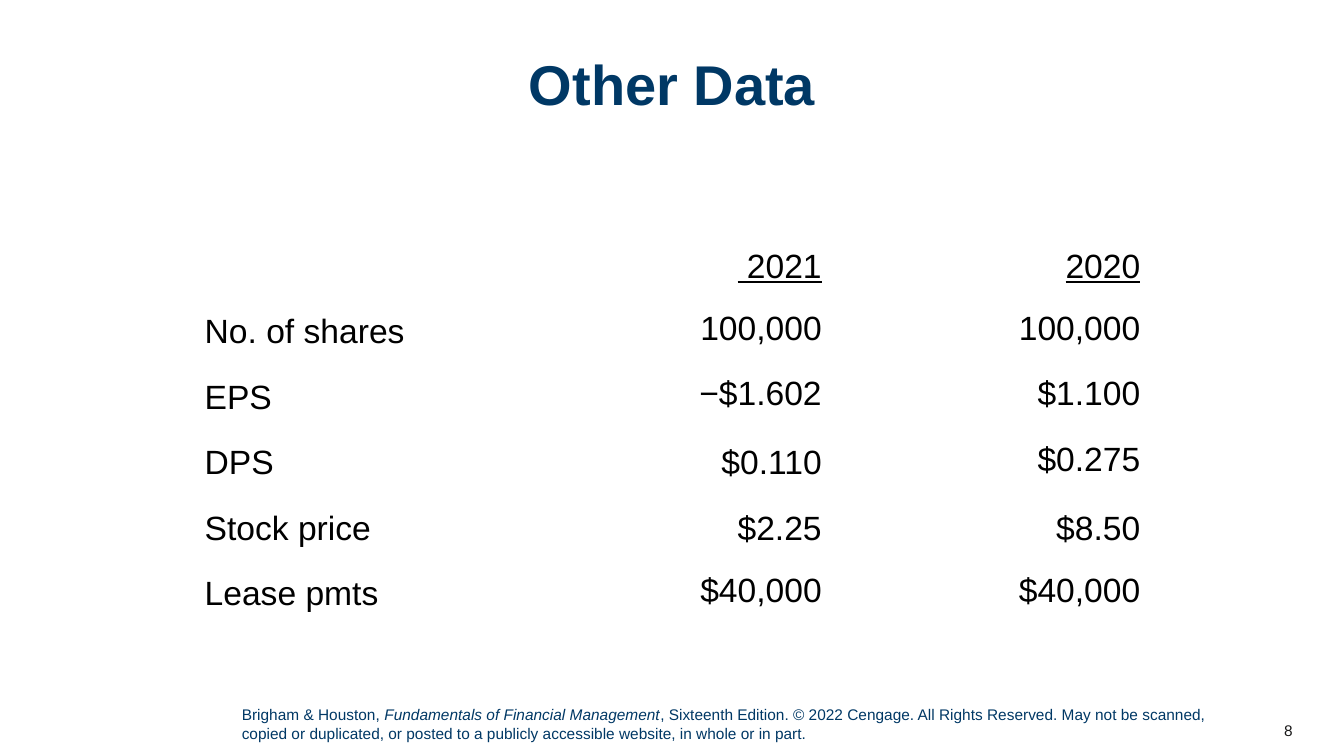
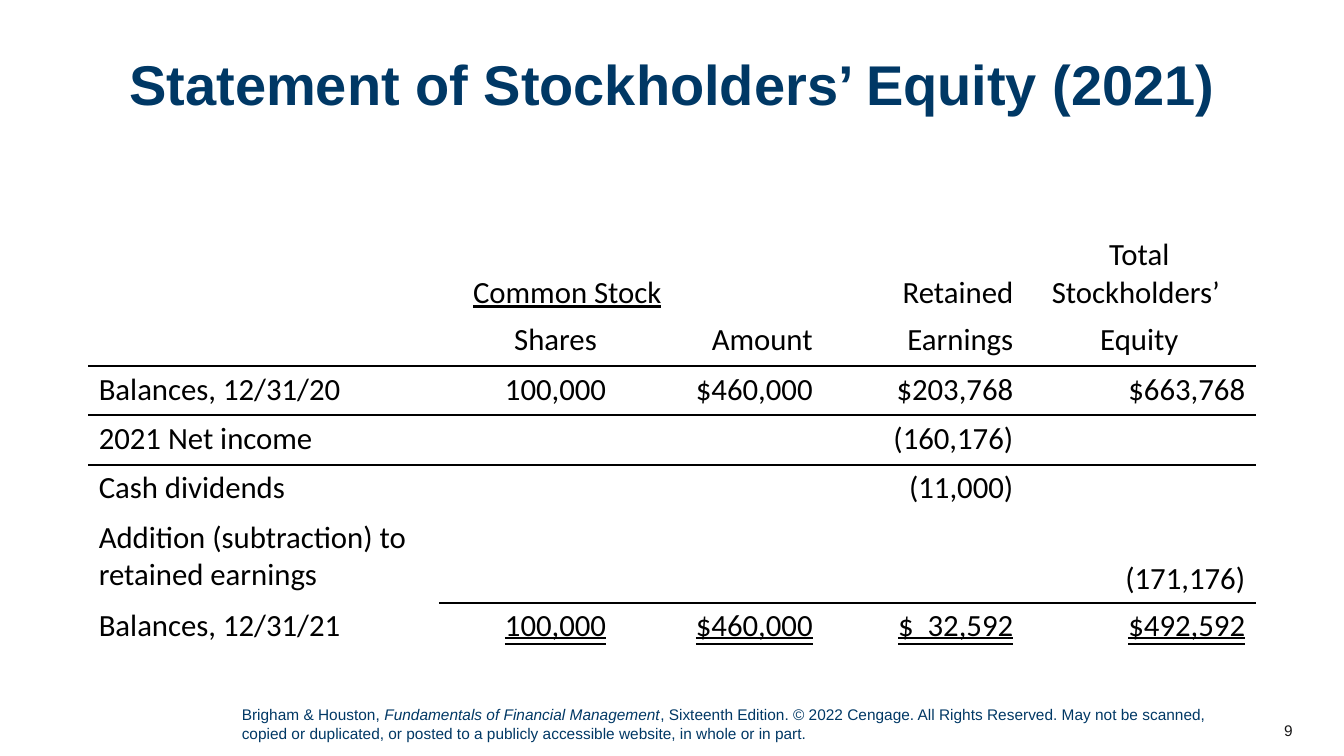
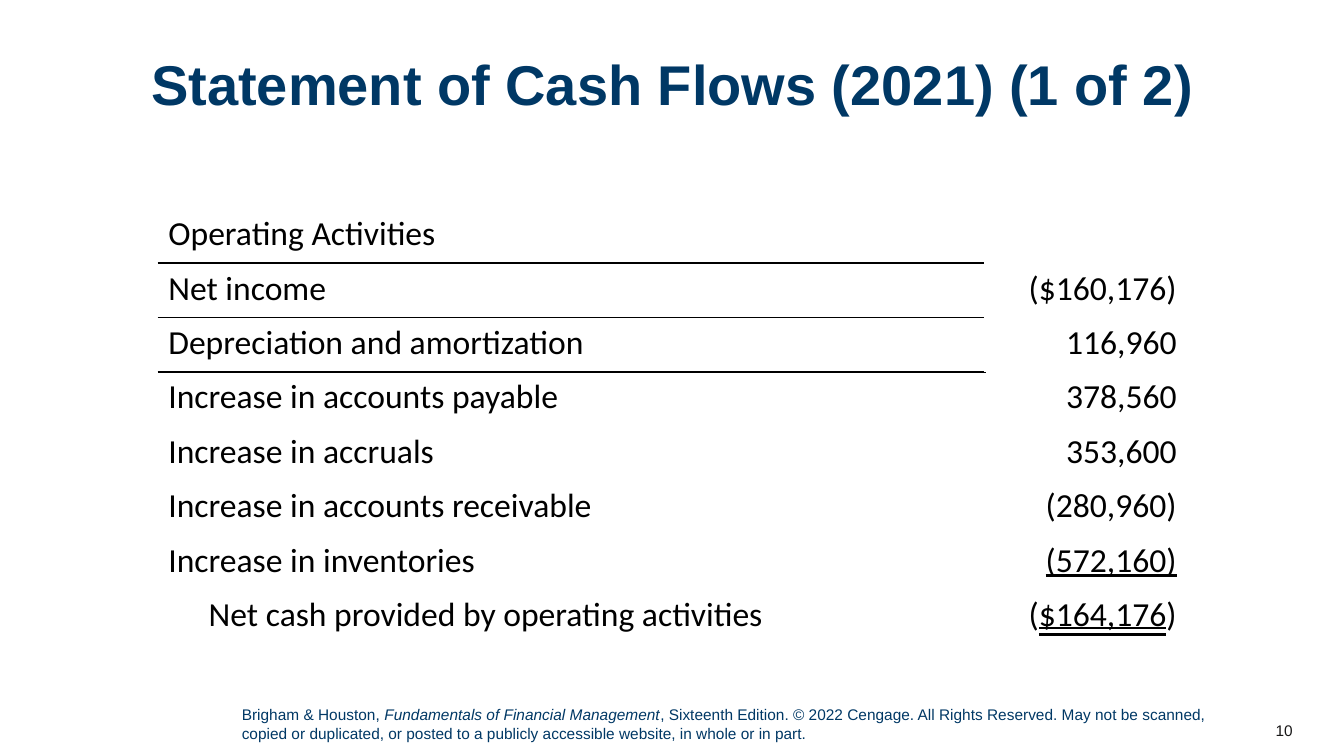
from lxml.etree import SubElement
from pptx import Presentation
from pptx.dml.color import RGBColor
from pptx.enum.text import MSO_ANCHOR, MSO_UNDERLINE, PP_ALIGN
from pptx.oxml.ns import qn
from pptx.util import Pt

PX = 9144  # EMU in one px, 100 px to the inch

NAVY = RGBColor(0x00, 0x38, 0x65)
INK = RGBColor(0x18, 0x17, 0x17)
BLACK = RGBColor(0, 0, 0)
WHITE = RGBColor(255, 255, 255)

LEFT, MID, RIGHT = PP_ALIGN.LEFT, PP_ALIGN.CENTER, PP_ALIGN.RIGHT
SIDES = {"l": LEFT, "c": MID, "r": RIGHT}
LOW = {"vertical_anchor": MSO_ANCHOR.BOTTOM}
TIGHT = {"line_spacing": 0.9, "space_after": Pt(12)}

# Font formats
HEAD = {"name": "Arial", "size": Pt(40), "bold": True, "rgb": NAVY}
FOOT = {"name": "Arial", "size": Pt(11), "rgb": NAVY}
PAGE = FOOT | {"rgb": INK}
DATA = {"name": "Arial", "size": Pt(24), "rgb": BLACK}
BOOK = DATA | {"name": "Calibri"}
SMALL = BOOK | {"size": Pt(22)}
LINE = {"underline": True}
TWIN = {"underline": MSO_UNDERLINE.DOUBLE_LINE}

CREDIT = [
    ("Brigham & Houston, ", {}),
    ("Fundamentals of Financial Management", {"italic": True}),
    (", Sixteenth Edition. © 2022 Cengage. All Rights Reserved. May not be "
     "scanned, copied or duplicated, or posted to a publicly accessible "
     "website, in whole or in part.", {}),
]


def style(thing, form):
    """Set each format value on a font, paragraph, frame or cell."""
    for key, val in form.items():
        if key == "rgb":
            thing.color.rgb = val
        else:
            setattr(thing, key, val)


def write(par, runs, font, form):
    """Fill a paragraph from a string or a list of (text, font) pairs."""
    style(par, form)
    for text, extra in [(runs, {})] if isinstance(runs, str) else runs:
        run = par.add_run()
        run.text = text
        style(run.font, font | extra)


def edge(cell, tag):
    """Draw a black border on one side of a cell."""
    line = SubElement(cell._tc.get_or_add_tcPr(), qn("a:" + tag), w=str(Pt(1.5)))
    fill = SubElement(line, qn("a:solidFill"))
    SubElement(fill, qn("a:srgbClr"), val=str(BLACK))


class Deck:
    def __init__(self, first):
        self.prs = Presentation()
        self.prs.slide_width, self.prs.slide_height = 1333 * PX, 750 * PX
        self.plan = self.prs.slide_layouts.get_by_name("Title Only")
        self.place(self.plan.placeholders[0], 52, 52, 1229, 133)
        self.page = first - 1
        self.slide = None

    def place(self, shape, *box):
        names = ("left", "top", "width", "height")
        style(shape, {name: n * PX for name, n in zip(names, box)})

    def start(self, title):
        """Add a slide with its title, footer and page number."""
        self.slide = self.prs.slides.add_slide(self.plan)
        self.page += 1
        frame = self.slide.shapes.title.text_frame
        style(frame, {"vertical_anchor": MSO_ANCHOR.TOP, "word_wrap": True})
        write(frame.paragraphs[0], title, HEAD,
              {"alignment": MID, "line_spacing": 0.9})
        self.text((1212, 705, 80, 40), str(self.page), PAGE, RIGHT,
                  MSO_ANCHOR.MIDDLE)
        self.text((230, 695, 980, 47), CREDIT, FOOT)

    def text(self, box, runs, font, side=LEFT, anchor=MSO_ANCHOR.TOP):
        frame = self.slide.shapes.add_textbox(*(n * PX for n in box)).text_frame
        style(frame, {"word_wrap": True, "vertical_anchor": anchor})
        write(frame.paragraphs[0], runs, font, {"alignment": side})

    def table(self, spot, cols, rows, sides, font, data,
              pars={}, cells={}, rules={}):
        """Rules map a row to the first and end column of the line below it."""
        box = (*spot, sum(cols), sum(rows))
        grid = self.slide.shapes.add_table(
            len(rows), len(cols), *(n * PX for n in box)).table
        style(grid, {"first_row": False, "horz_banding": False})
        for col, wide in zip(grid.columns, cols):
            col.width = wide * PX
        for row, high in zip(grid.rows, rows):
            row.height = high * PX

        for r, line in enumerate(data):
            for c, runs in enumerate(line):
                cell, key = grid.cell(r, c), (r, c)
                style(cell, cells.get(key, {}))
                # Borders go ahead of the fill
                for tag, row in (("lnT", r - 1), ("lnB", r)):
                    if c in range(*rules.get(row, (0, 0))):
                        edge(cell, tag)
                cell.fill.solid()
                cell.fill.fore_color.rgb = WHITE
                if runs:
                    form = {"alignment": SIDES[sides[c]]} | pars.get(key, {})
                    write(cell.text_frame.paragraphs[0], runs, font, form)


def main():
    deck = Deck(first=8)

    # Share data
    deck.start("Other Data")
    deck.table(
        (193, 241), [316] * 3, [65] * 6, "lrr", DATA,
        [("", [(" 2021", LINE)], [("2020", LINE)]),
         ("No. of shares", "100,000", "100,000"),
         ("EPS", "−$1.602", "$1.100"),
         ("DPS", "$0.110", "$0.275"),
         ("Stock price", "$2.25", "$8.50"),
         ("Lease pmts", "$40,000", "$40,000")],
        pars={key: TIGHT for key in
              [(1, 1), (1, 2), (2, 1), (2, 2), (3, 2), (5, 1), (5, 2)]})

    # Equity
    deck.start("Statement of Stockholders’ Equity (2021)")
    sums = ("100,000", "$460,000", "$  32,592", "$492,592")
    deck.table(
        (88, 226), [348, 230, 150, 199, 230], [88, 49, 49, 49, 49, 88, 49],
        "lcrrr", SMALL,
        [("", [("Common Stock", LINE)], "", "Retained", "Total Stockholders’ "),
         ("", "Shares", "Amount", "Earnings", "Equity"),
         ("Balances, 12/31/20", "100,000", "$460,000", "$203,768", "$663,768"),
         ("2021 Net income", "", "", "(160,176)", ""),
         ("Cash dividends", "", "", "(11,000)", ""),
         ("Addition (subtraction) to retained earnings", "", "", "",
          "(171,176)"),
         ("Balances, 12/31/21", *([(n, TWIN)] for n in sums))],
        pars={(0, 1): {"alignment": RIGHT}, (0, 4): {"alignment": MID},
              (1, 4): {"alignment": MID}},
        cells={key: LOW for key in [(0, 1), (0, 3), (0, 4), (5, 4)]},
        rules={1: (0, 5), 2: (0, 5), 5: (1, 5)})

    # Cash flows
    deck.start("Statement of Cash Flows (2021) (1 of 2)")
    deck.table(
        (157, 207), [820, 200], [54] * 8, "lr", BOOK,
        [("Operating Activities", ""),
         ("Net income", "($160,176)"),
         ("Depreciation and amortization", "116,960"),
         ("Increase in accounts payable", "378,560"),
         ("Increase in accruals", "353,600"),
         ("Increase in accounts receivable", "(280,960)"),
         ("Increase in inventories", [("(572,160)", LINE)]),
         ("Net cash provided by operating activities",
          [("(", {}), ("$164,176", TWIN), (")", {})])],
        cells={(7, 0): {"margin_left": 50 * PX}},
        rules={0: (0, 1), 1: (0, 1)})

    deck.prs.save("out.pptx")


if __name__ == "__main__":
    main()
